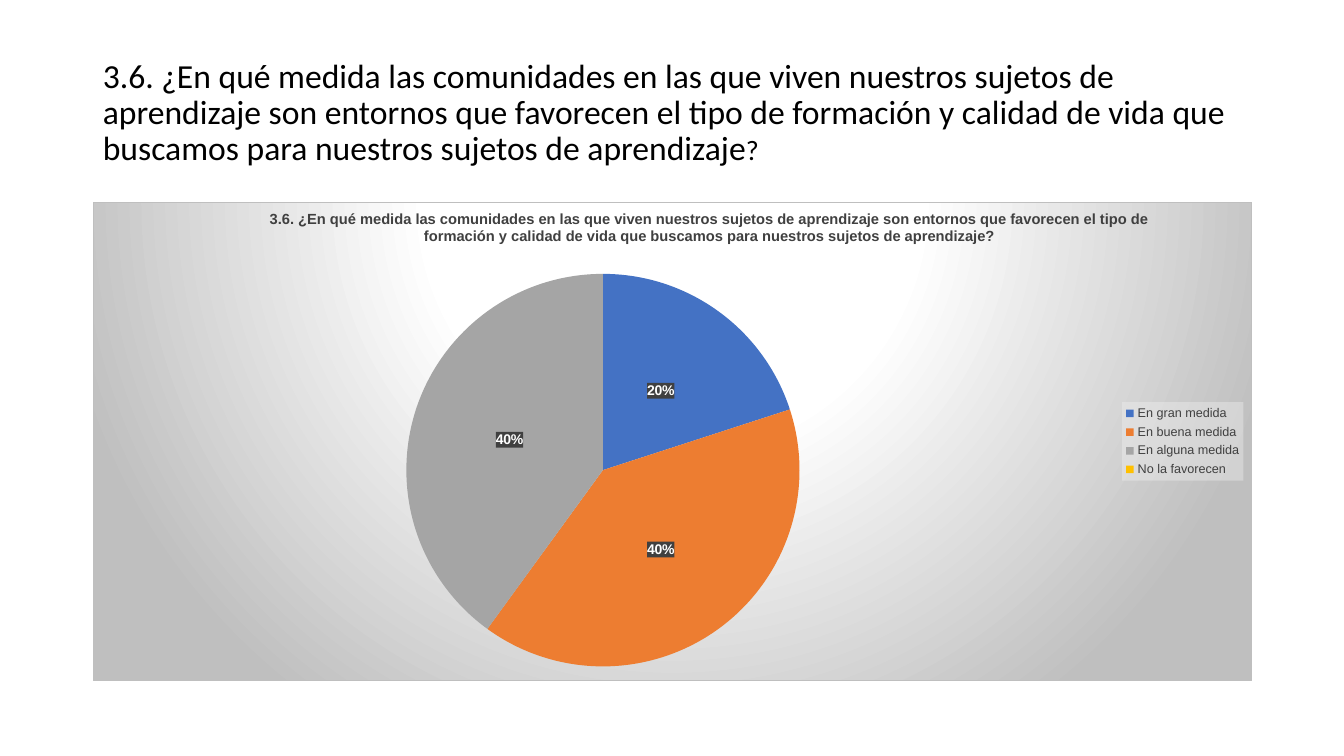
from lxml import etree
from pptx import Presentation
from pptx.chart.data import CategoryChartData
from pptx.dml.color import RGBColor
from pptx.enum.chart import XL_CHART_TYPE, XL_LABEL_POSITION, XL_LEGEND_POSITION
from pptx.enum.text import MSO_ANCHOR, MSO_AUTO_SIZE, PP_ALIGN
from pptx.oxml import parse_xml
from pptx.oxml.ns import nsdecls, qn
from pptx.util import Inches, Pt

BLACK = RGBColor(0x00, 0x00, 0x00)
WHITE = RGBColor(0xFF, 0xFF, 0xFF)
DARK = RGBColor(0x40, 0x40, 0x40)
PALE = RGBColor(0xF2, 0xF2, 0xF2)
EDGE = RGBColor(0xBF, 0xBF, 0xBF)
BLUE = RGBColor(0x44, 0x72, 0xC4)
ORANGE = RGBColor(0xED, 0x7D, 0x31)
GRAY = RGBColor(0xA5, 0xA5, 0xA5)
GOLD = RGBColor(0xFF, 0xC0, 0x00)

ASK = ("3.6. ¿En qué medida las comunidades en las que viven nuestros sujetos de "
       "aprendizaje son entornos que favorecen el tipo de formación y calidad de "
       "vida que buscamos para nuestros sujetos de aprendizaje")
HEAD = ASK.replace("son entornos", "son entornos").replace(
    "favorecen el", "favorecen el") + "?"
ANSWERS = [("En gran medida", 20, BLUE), ("En buena medida", 40, ORANGE),
           ("En alguna medida", 40, GRAY), ("No la favorecen", 0, GOLD)]


def style(font, size, color, bold=False, name="Arial"):
    font.name, font.size, font.bold = name, Pt(size), bold
    font.color.rgb = color


def look(fill, line="<a:ln><a:noFill/></a:ln>"):
    """Return chart shape properties with the given fill and line XML."""
    return parse_xml(f"<c:spPr {nsdecls('c', 'a')}>{fill}{line}</c:spPr>")


def tint(color, alpha):
    return (f'<a:solidFill><a:srgbClr val="{color}">'
            f'<a:alpha val="{alpha * 1000}"/></a:srgbClr></a:solidFill>')


def layout(**sizes):
    """Return a manual layout in fractions of the chart area."""
    inner = '<c:layoutTarget val="inner"/>' if "w" in sizes else ""
    modes = "".join(f'<c:{k}Mode val="edge"/>' for k in "xy")
    parts = "".join(f'<c:{k} val="{v}"/>' for k, v in sizes.items())
    return parse_xml(f"<c:layout {nsdecls('c')}><c:manualLayout>{inner}{modes}"
                     f"{parts}</c:manualLayout></c:layout>")


def place(node, spot, index):
    for old in node.findall(qn("c:layout")):
        node.remove(old)
    node.insert(index, spot)


def add_title(slide, box):
    title = slide.shapes.title
    title.left, title.top, title.width, title.height = box
    frame = title.text_frame
    frame.word_wrap, frame.auto_size = True, MSO_AUTO_SIZE.NONE
    frame.vertical_anchor = MSO_ANCHOR.MIDDLE
    para = frame.paragraphs[0]
    para.alignment, para.line_spacing = PP_ALIGN.LEFT, 0.9
    for text, size in ((ASK, 24), ("?", 20)):
        run = para.add_run()
        run.text = text
        style(run.font, size, BLACK, name="Calibri")


def add_back(chart):
    stops = "".join(f'<a:gs pos="{pos * 1000}"><a:srgbClr val="{color}"/></a:gs>'
                    for pos, color in ((0, WHITE), (39, WHITE), (100, EDGE)))
    fill = (f'<a:gradFill><a:gsLst>{stops}</a:gsLst><a:path path="circle">'
            '<a:fillToRect l="50000" t="-80000" r="50000" b="180000"/>'
            '</a:path></a:gradFill>')
    line = (f'<a:ln w="9525"><a:solidFill><a:srgbClr val="{EDGE}"/>'
            '</a:solidFill></a:ln>')
    chart.element.find(qn("c:chart")).addnext(look(fill, line))


def add_labels(plot):
    plot.has_data_labels = True
    labels = plot.series[0].data_labels
    style(labels.font, 10, WHITE, True)
    labels.number_format, labels.number_format_is_linked = "0%", False
    labels.position = XL_LABEL_POSITION.CENTER
    labels.show_percentage, labels.show_value = True, False
    node = labels.element if hasattr(labels, "element") else labels._element
    node.find(qn("c:txPr")).addprevious(look(tint(DARK, 75)))
    for index, answer in enumerate(ANSWERS):
        if not answer[1]:
            skip = etree.Element(qn("c:dLbl"))
            etree.SubElement(skip, qn("c:idx"), val=str(index))
            etree.SubElement(skip, qn("c:delete"), val="1")
            node.insert(0, skip)


def add_pie(slide, box):
    data = CategoryChartData()
    data.categories = [name for name, _, _ in ANSWERS]
    data.add_series("Series 1", [value for _, value, _ in ANSWERS])
    chart = slide.shapes.add_chart(XL_CHART_TYPE.PIE, *box, data).chart
    style(chart.font, 10, BLACK)
    add_back(chart)

    frame = chart.chart_title.text_frame
    frame.text = HEAD
    style(frame.paragraphs[0].font, 10.5, DARK, True)
    head = chart.element.find(".//" + qn("c:title"))
    place(head, layout(x=0.15, y=0.01), 1)

    plot = chart.plots[0]
    plot.vary_by_categories = True
    area = chart.element.find(".//" + qn("c:plotArea"))
    place(area, layout(x=0.27, y=0.15, w=0.34, h=0.82), 0)
    for index, (_, _, color) in enumerate(ANSWERS):
        fill = plot.series[0].points[index].format.fill
        fill.solid()
        fill.fore_color.rgb = color
    add_labels(plot)

    chart.has_legend = True
    legend = chart.legend
    legend.position = XL_LEGEND_POSITION.RIGHT
    legend.include_in_layout = False
    style(legend.font, 9, DARK)
    key = chart.element.find(".//" + qn("c:legend"))
    key.find(qn("c:txPr")).addprevious(look(tint(PALE, 39)))


def main():
    deck = Presentation()
    deck.slide_width, deck.slide_height = Inches(13.33), Inches(7.5)
    slide = deck.slides.add_slide(deck.slide_layouts[5])
    left, width = Inches(0.92), Inches(11.5)
    add_title(slide, (left, Inches(0.4), width, Inches(1.45)))
    add_pie(slide, (left, Inches(2), width, Inches(4.76)))
    deck.save("out.pptx")


if __name__ == "__main__":
    main()
